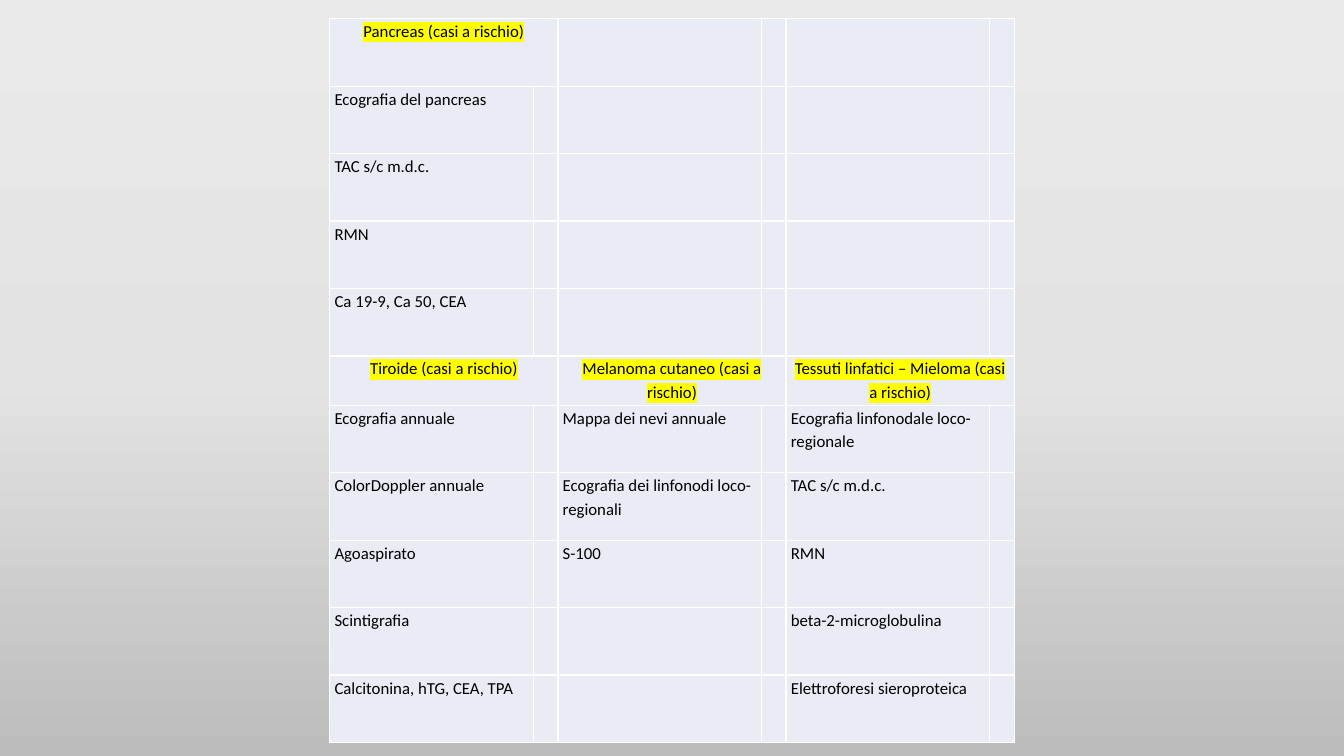
from lxml.etree import SubElement
from pptx import Presentation
from pptx.dml.color import RGBColor
from pptx.enum.text import PP_ALIGN
from pptx.oxml import parse_xml
from pptx.oxml.ns import nsdecls, qn
from pptx.util import Cm, Pt

EXAMS = [
    ["Pancreas (casi a rischio)", "", ""],
    ["Ecografia del pancreas", "", ""],
    ["TAC s/c m.d.c.", "", ""],
    ["RMN", "", ""],
    ["Ca 19-9, Ca 50, CEA", "", ""],
    ["Tiroide (casi a rischio)", "Melanoma cutaneo (casi a rischio)",
     "Tessuti linfatici – Mieloma (casi a rischio)"],
    ["Ecografia annuale", "Mappa dei nevi annuale",
     "Ecografia linfonodale loco-regionale"],
    ["ColorDoppler annuale", "Ecografia dei linfonodi loco-regionali",
     "TAC s/c m.d.c."],
    ["Agoaspirato", "S-100", "RMN"],
    ["Scintigrafia", "", "beta-2-microglobulina"],
    ["Calcitonina, hTG, CEA, TPA", "", "Elettroforesi sieroproteica"],
]
ORGANS = 5
WIDTHS = [Cm(5.13), Cm(0.62)]


def color(code):
    return RGBColor.from_string(code)


def shade(slide, stops):
    marks = "".join(
        f'<a:gs pos="{pos * 1000}"><a:srgbClr val="{code}"/></a:gs>'
        for pos, code in stops)
    back = parse_xml(
        f'<p:bg {nsdecls("p", "a")}><p:bgPr><a:gradFill rotWithShape="1">'
        f'<a:gsLst>{marks}</a:gsLst><a:lin ang="5400000" scaled="0"/>'
        '</a:gradFill><a:effectLst/></p:bgPr></p:bg>')
    slide.element.cSld.insert(0, back)


def border(cell, code):
    props = cell._tc.get_or_add_tcPr()
    for side in ("a:lnL", "a:lnR", "a:lnT", "a:lnB"):
        line = SubElement(props, qn(side), w=str(Pt(1)))
        fill = SubElement(line, qn("a:solidFill"))
        SubElement(fill, qn("a:srgbClr"), val=code)


def paint(cell):
    border(cell, "FFFFFF")
    cell.fill.solid()
    cell.fill.fore_color.rgb = color("E9EBF5")
    cell.margin_left = cell.margin_right = Cm(0.12)
    cell.margin_top = cell.margin_bottom = 0


def write(cell, text, title):
    par = cell.text_frame.paragraphs[0]
    par.line_spacing = 1.15
    par.space_after = Pt(10)
    par.alignment = PP_ALIGN.CENTER if title else PP_ALIGN.LEFT
    run = par.add_run()
    run.text = text
    run.font.size = Pt(12)
    run.font.color.rgb = color("000000")
    if title:
        mark = SubElement(run.font._element, qn("a:highlight"))
        SubElement(mark, qn("a:srgbClr"), val="FFFF00")
    run.font.name = "Calibri"


def build(slide):
    count = len(EXAMS[0])
    heights = [Cm(1.24 if row == ORGANS else 1.7) for row in range(len(EXAMS))]
    frame = slide.shapes.add_table(
        len(EXAMS), 2 * count, Cm(8.31), Cm(0.47),
        count * sum(WIDTHS), sum(heights))
    table = frame.table
    table.first_row = table.horz_banding = False
    for col, width in zip(table.columns, WIDTHS * count):
        col.width = width
    for row, height in zip(table.rows, heights):
        row.height = height
    for cell in table.iter_cells():
        paint(cell)
    for row, texts in enumerate(EXAMS):
        for col, text in enumerate(texts):
            if not text:
                continue
            cell = table.cell(row, 2 * col)
            title = row in (0, ORGANS)
            if title:
                cell.merge(table.cell(row, 2 * col + 1))
            write(cell, text, title)


def main():
    deck = Presentation()
    deck.slide_width = Cm(33.87)
    deck.slide_height = Cm(19.05)
    slide = deck.slides.add_slide(deck.slide_layouts[6])
    shade(slide, [(0, "EBEAEA"), (50, "E4E3E3"), (100, "BDBCBC")])
    build(slide)
    deck.save("out.pptx")


if __name__ == "__main__":
    main()
